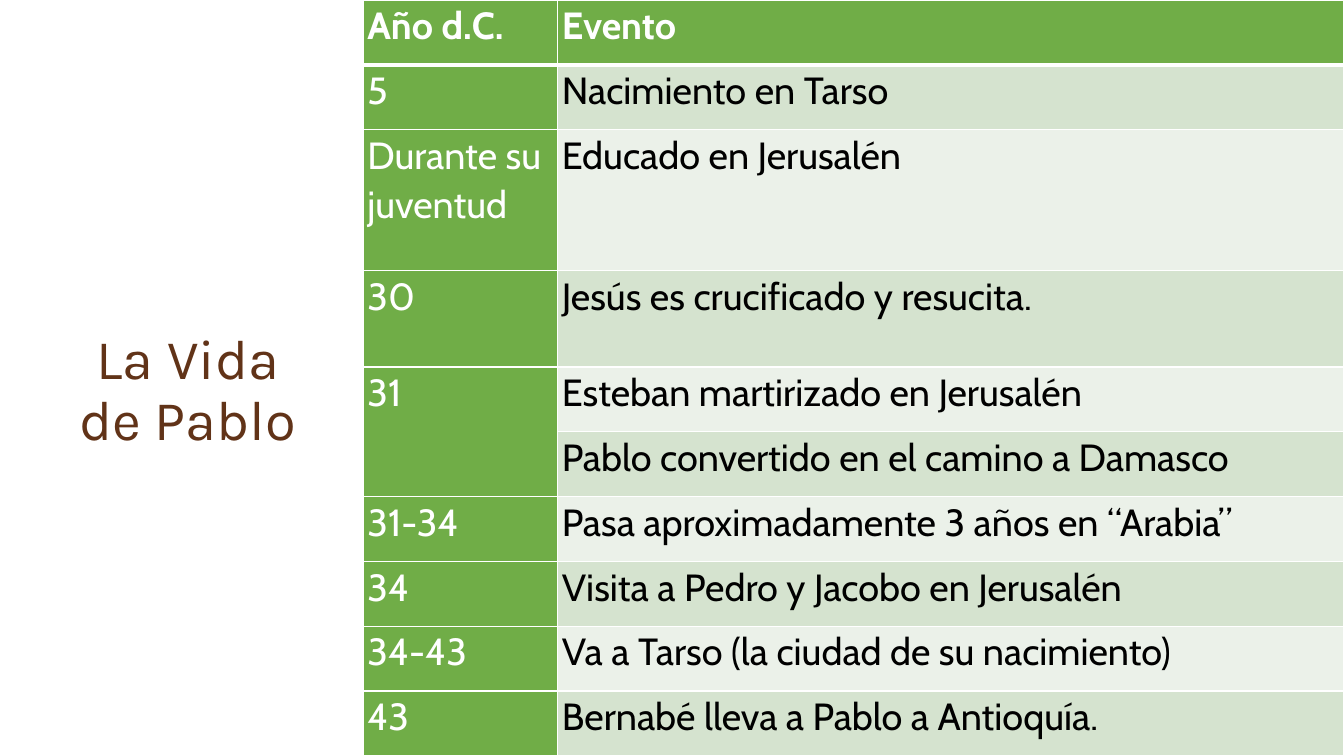
"""Build the slide with the timeline of Paul's life."""
import pptx
import pptx.dml.color
import pptx.enum.text
import pptx.oxml
import pptx.oxml.ns
import pptx.util
from pptx.util import Pt

HEADING = "La Vida de Pablo"
COLUMNS = ("Año d.C.", "Evento")
TIMELINE = [
    ("5", ["Nacimiento en Tarso"]),
    ("Durante su juventud", ["Educado en Jerusalén"]),
    ("30", ["Jesús es crucificado y resucita."]),
    ("31", ["Esteban martirizado en Jerusalén", "Pablo convertido en el camino a Damasco"]),
    ("31-34", ["Pasa aproximadamente 3 años en “Arabia”"]),
    ("34", ["Visita a Pedro y Jacobo en Jerusalén"]),
    ("34-43", ["Va a Tarso (la ciudad de su nacimiento)"]),
    ("43", ["Bernabé lleva a Pablo a Antioquía."]),
]
THEME = {
    "heading_font": "Karla", "heading_size": 40, "heading": "613318",
    "table_font": "Cabin", "table_size": 27,
    "green": "70AD47", "bands": ("D5E3CF", "EBF1E9"),
    "light": "FFFFFF", "dark": "000000",
}
SLIDE_WIDTH, SLIDE_HEIGHT = 960, 540
TABLE_LEFT, YEAR_WIDTH = 259.4, 139
ROW_HEIGHT = 46.3
TALL_ROWS = {"Durante su juventud": 100.8, "30": 68.8}
RULE, HEADER_RULE = 1, 3


def rgb(color):
    """Turn a hex string into a colour."""
    return pptx.dml.color.RGBColor.from_string(color)


def write(frame, text, *, font, size, color, bold=False, spacing=1.0, align=None):
    """Put formatted text in a text frame."""
    frame.word_wrap = True
    paragraph = frame.paragraphs[0]
    paragraph.line_spacing = spacing
    paragraph.alignment = align
    run = paragraph.add_run()
    run.text = text
    run.font.name = font
    run.font.size = Pt(size)
    run.font.bold = bold
    run.font.color.rgb = rgb(color)


def draw_borders(cell, top, bottom):
    """Draw the white rules around a cell."""
    properties = cell._tc.get_or_add_tcPr()
    for side, width in (("L", RULE), ("R", RULE), ("T", top), ("B", bottom)):
        properties.append(pptx.oxml.parse_xml(
            f'<a:ln{side} {pptx.oxml.ns.nsdecls("a")} w="{Pt(width)}"><a:solidFill>'
            f'<a:srgbClr val="{THEME["light"]}"/></a:solidFill></a:ln{side}>'))


def add_heading(slide):
    """Add the heading left of the table."""
    heading = slide.shapes.add_textbox(Pt(36), Pt(213.8), Pt(196.6), Pt(113))
    heading.text_frame.vertical_anchor = pptx.enum.text.MSO_ANCHOR.BOTTOM
    write(heading.text_frame, HEADING, font=THEME["heading_font"],
          size=THEME["heading_size"], color=THEME["heading"], spacing=0.9,
          align=pptx.enum.text.PP_ALIGN.CENTER)


def add_timeline(slide):
    """Add the table of years and events."""
    rows = [COLUMNS]
    spans = []
    for year, events in TIMELINE:
        if len(events) > 1:
            spans.append((len(rows), len(rows) + len(events) - 1))
        rows += [(year if i == 0 else "", event) for i, event in enumerate(events)]

    table_width = SLIDE_WIDTH - TABLE_LEFT
    timeline = slide.shapes.add_table(len(rows), len(COLUMNS), Pt(TABLE_LEFT), 0,
                                      Pt(table_width), Pt(SLIDE_HEIGHT)).table
    timeline.horz_banding = False
    timeline.columns[0].width = Pt(YEAR_WIDTH)
    timeline.columns[1].width = Pt(table_width - YEAR_WIDTH)

    for r, row in enumerate(rows):
        timeline.rows[r].height = Pt(TALL_ROWS.get(row[0], ROW_HEIGHT))
        for c, text in enumerate(row):
            cell = timeline.cell(r, c)
            on_green = r == 0 or c == 0
            cell.margin_left = cell.margin_right = Pt(3)
            cell.margin_top = cell.margin_bottom = 0
            draw_borders(cell, top=HEADER_RULE if r == 1 else RULE,
                         bottom=HEADER_RULE if r == 0 else RULE)
            cell.fill.solid()
            cell.fill.fore_color.rgb = rgb(THEME["green"] if on_green
                                           else THEME["bands"][(r - 1) % 2])
            if text:
                write(cell.text_frame, text, font=THEME["table_font"],
                      size=THEME["table_size"], bold=r == 0, spacing=1.07,
                      color=THEME["light"] if on_green else THEME["dark"])
    for first, last in spans:
        timeline.cell(first, 0).merge(timeline.cell(last, 0))


def main():
    """Build and save the presentation."""
    deck = pptx.Presentation()
    deck.slide_width, deck.slide_height = Pt(SLIDE_WIDTH), Pt(SLIDE_HEIGHT)
    slide = deck.slides.add_slide(deck.slide_layouts[6])
    add_heading(slide)
    add_timeline(slide)
    deck.save("out.pptx")


if __name__ == "__main__":
    main()
